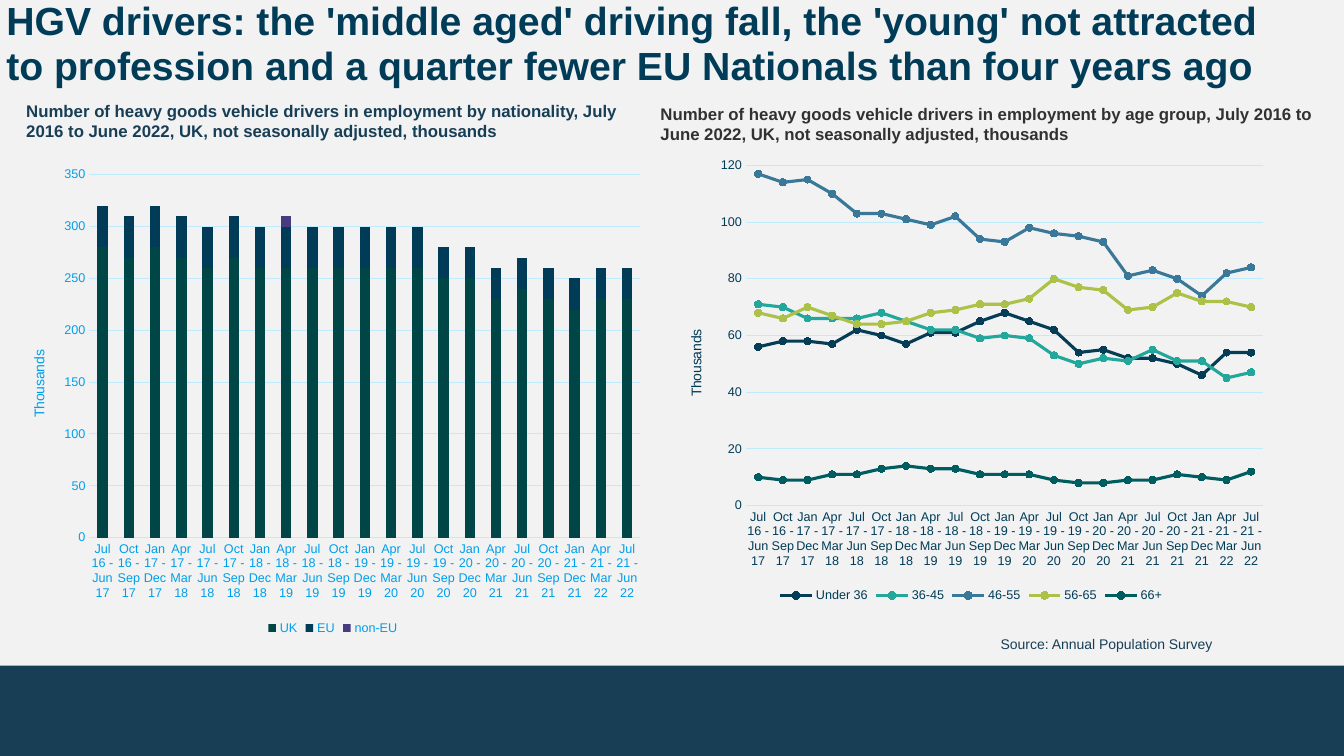
from pptx import Presentation
from pptx.chart.data import CategoryChartData
from pptx.dml.color import RGBColor
from pptx.enum.chart import XL_CHART_TYPE, XL_LEGEND_POSITION, XL_MARKER_STYLE, XL_TICK_MARK
from pptx.enum.shapes import MSO_SHAPE
from pptx.enum.text import MSO_ANCHOR
from pptx.oxml import parse_xml
from pptx.oxml.ns import nsdecls
from pptx.util import Pt

PX = 9525
FONT = "Arial"
PAPER = RGBColor(0xF2, 0xF2, 0xF2)
SLATE = RGBColor(0x18, 0x3E, 0x56)
NAVY = RGBColor(0x00, 0x3C, 0x57)
INK = RGBColor(0x00, 0x3B, 0x57)
COAL = RGBColor(0x32, 0x31, 0x32)
SKY = RGBColor(0x00, 0x9F, 0xEB)
PALE = RGBColor(0xC0, 0xEB, 0xFF)
PINE = RGBColor(0x00, 0x46, 0x47)
PLUM = RGBColor(0x48, 0x3B, 0x7F)
DEEP = RGBColor(0x05, 0x3D, 0x57)
TEAL = RGBColor(0x24, 0xA7, 0x9B)
STEEL = RGBColor(0x3A, 0x78, 0x99)
LIME = RGBColor(0xAB, 0xC1, 0x48)
MOSS = RGBColor(0x00, 0x5D, 0x5F)

STARTS = ["Jul", "Oct", "Jan", "Apr"]
ENDS = ["Jun", "Sep", "Dec", "Mar"]
TERMS = [
    f"{STARTS[i % 4]} {16 + (i + 2) // 4} - {ENDS[i % 4]} {17 + (i + 1) // 4}"
    for i in range(21)
]
NATIONS = [
    ("UK", PINE, [280, 270, 280, 270, 260, 270, 260, 260, 260, 260, 260,
                  260, 260, 250, 250, 230, 240, 230, 220, 230, 230]),
    ("EU", INK, [40] * 13 + [30] * 8),
    ("non-EU", PLUM, [0] * 7 + [10] + [0] * 13),
]
AGES = [
    ("Under 36", DEEP, [56, 58, 58, 57, 62, 60, 57, 61, 61, 65, 68,
                        65, 62, 54, 55, 52, 52, 50, 46, 54, 54]),
    ("36-45", TEAL, [71, 70, 66, 66, 66, 68, 65, 62, 62, 59, 60,
                     59, 53, 50, 52, 51, 55, 51, 51, 45, 47]),
    ("46-55", STEEL, [117, 114, 115, 110, 103, 103, 101, 99, 102, 94, 93,
                      98, 96, 95, 93, 81, 83, 80, 74, 82, 84]),
    ("56-65", LIME, [68, 66, 70, 67, 64, 64, 65, 68, 69, 71, 71,
                     73, 80, 77, 76, 69, 70, 75, 72, 72, 70]),
    ("66+", MOSS, [10, 9, 9, 11, 11, 13, 14, 13, 13, 11, 11,
                   11, 9, 8, 8, 9, 9, 11, 10, 9, 12]),
]


def scale(box):
    return [n * PX for n in box]


def style(font, size, color, bold=False):
    font.name = FONT
    font.size = Pt(size)
    font.bold = bold
    font.color.rgb = color


def add_text(slide, box, text, size=12, color=SLATE, bold=False, left=0,
             right=10, edge=5, anchor=MSO_ANCHOR.BOTTOM, space=None):
    frame = slide.shapes.add_textbox(*scale(box)).text_frame
    frame.word_wrap = True
    frame.vertical_anchor = anchor
    frame.margin_left, frame.margin_right = left * PX, right * PX
    frame.margin_top = frame.margin_bottom = edge * PX
    line = frame.paragraphs[0]
    line.line_spacing = space
    run = line.add_run()
    run.text = text
    style(run.font, size, color, bold)


def add_band(slide, box, color):
    band = slide.shapes.add_shape(MSO_SHAPE.RECTANGLE, *scale(box))
    band.shadow.inherit = False
    band.fill.solid()
    band.fill.fore_color.rgb = color
    band.line.fill.background()


def set_plot(chart, plot):
    area = chart.element.xpath(".//c:plotArea")[0]
    for old in area.xpath("./c:layout"):
        area.remove(old)
    parts = "".join(f'<c:{key} val="{val}"/>' for key, val in zip("xywh", plot))
    area.insert(0, parse_xml(
        f'<c:layout {nsdecls("c")}><c:manualLayout><c:layoutTarget val="inner"/>'
        '<c:xMode val="edge"/><c:yMode val="edge"/>'
        f'{parts}</c:manualLayout></c:layout>'))


def set_axes(chart, color, top, step):
    base, side = chart.category_axis, chart.value_axis
    for axis in (base, side):
        axis.major_tick_mark = axis.minor_tick_mark = XL_TICK_MARK.NONE
        style(axis.tick_labels.font, 9, color)
    base.format.line.color.rgb = PALE
    base.format.line.width = Pt(0.75)
    side.format.line.fill.background()
    side.minimum_scale, side.maximum_scale, side.major_unit = 0, top, step
    side.has_major_gridlines = True
    side.major_gridlines.format.line.color.rgb = PALE
    side.major_gridlines.format.line.width = Pt(0.75)
    side.tick_labels.number_format = "#,##0,"
    side.tick_labels.number_format_is_linked = False
    run = side.axis_title.text_frame.paragraphs[0].add_run()
    run.text = "Thousands"
    style(run.font, 10, color)
    for body in chart.element.xpath(".//c:valAx/c:title//a:bodyPr"):
        body.set("rot", "-5400000")
        body.set("vert", "horz")
    for body in chart.element.xpath(".//c:catAx/c:txPr/a:bodyPr"):
        body.set("rot", "0")
        body.set("vert", "horz")


def add_chart(slide, kind, box, rows, color, top, step, plot):
    data = CategoryChartData(number_format="#,##0,")
    data.categories = TERMS
    for name, _, vals in rows:
        data.add_series(name, [val * 1000 for val in vals])
    chart = slide.shapes.add_chart(kind, *scale(box), data).chart
    style(chart.font, 10, INK)
    chart.has_title = False
    chart.has_legend = True
    chart.legend.position = XL_LEGEND_POSITION.BOTTOM
    chart.legend.include_in_layout = False
    style(chart.legend.font, 9, color)
    chart.plots[0].vary_by_categories = False
    set_axes(chart, color, top, step)
    set_plot(chart, plot)
    return chart


def add_bars(slide, box, rows, **look):
    chart = add_chart(slide, XL_CHART_TYPE.COLUMN_STACKED, box, rows, **look)
    chart.plots[0].gap_width = 150
    chart.plots[0].overlap = 100
    for bar, (_, color, _) in zip(chart.plots[0].series, rows):
        bar.format.fill.solid()
        bar.format.fill.fore_color.rgb = color


def add_lines(slide, box, rows, **look):
    chart = add_chart(slide, XL_CHART_TYPE.LINE_MARKERS, box, rows, **look)
    for line, (_, color, _) in zip(chart.plots[0].series, rows):
        line.smooth = False
        line.format.line.color.rgb = color
        line.format.line.width = Pt(2.25)
        line.marker.style = XL_MARKER_STYLE.CIRCLE
        line.marker.size = 5
        line.marker.format.fill.solid()
        line.marker.format.fill.fore_color.rgb = color
        line.marker.format.line.color.rgb = color


def main():
    """Build the slide on heavy goods vehicle drivers."""
    deck = Presentation()
    deck.slide_width, deck.slide_height = scale((1280, 720))
    slide = deck.slides.add_slide(deck.slide_layouts[6])
    slide.background.fill.solid()
    slide.background.fill.fore_color.rgb = PAPER
    add_band(slide, (0, 634, 1280, 86), SLATE)
    intro = "Number of heavy goods vehicle drivers in employment by"
    span = "July 2016 to June 2022, UK, not seasonally adjusted, thousands"
    add_text(slide, (25, 91, 599, 48), f"{intro} nationality, {span}", bold=True)
    add_text(slide, (953, 600, 288, 26), "Source: Annual Population Survey", size=10)
    add_text(slide, (6, 0, 1223, 86),
             "HGV drivers: the 'middle aged' driving fall, the 'young' not attracted "
             "to profession and a quarter fewer EU Nationals than four years ago",
             size=28, color=NAVY, bold=True, right=0, edge=0,
             anchor=MSO_ANCHOR.TOP, space=0.95)
    add_text(slide, (619, 94, 648, 48), f"{intro} age group, {span}",
             color=COAL, bold=True, left=10, anchor=MSO_ANCHOR.TOP)
    add_bars(slide, (12, 148, 610, 461), NATIONS, color=SKY,
             top=350000, step=50000, plot=(0.12, 0.04, 0.86, 0.75))
    add_lines(slide, (635, 140, 580, 438), AGES, color=INK,
              top=120000, step=20000, plot=(0.13, 0.04, 0.85, 0.74))
    deck.save("out.pptx")


if __name__ == "__main__":
    main()
